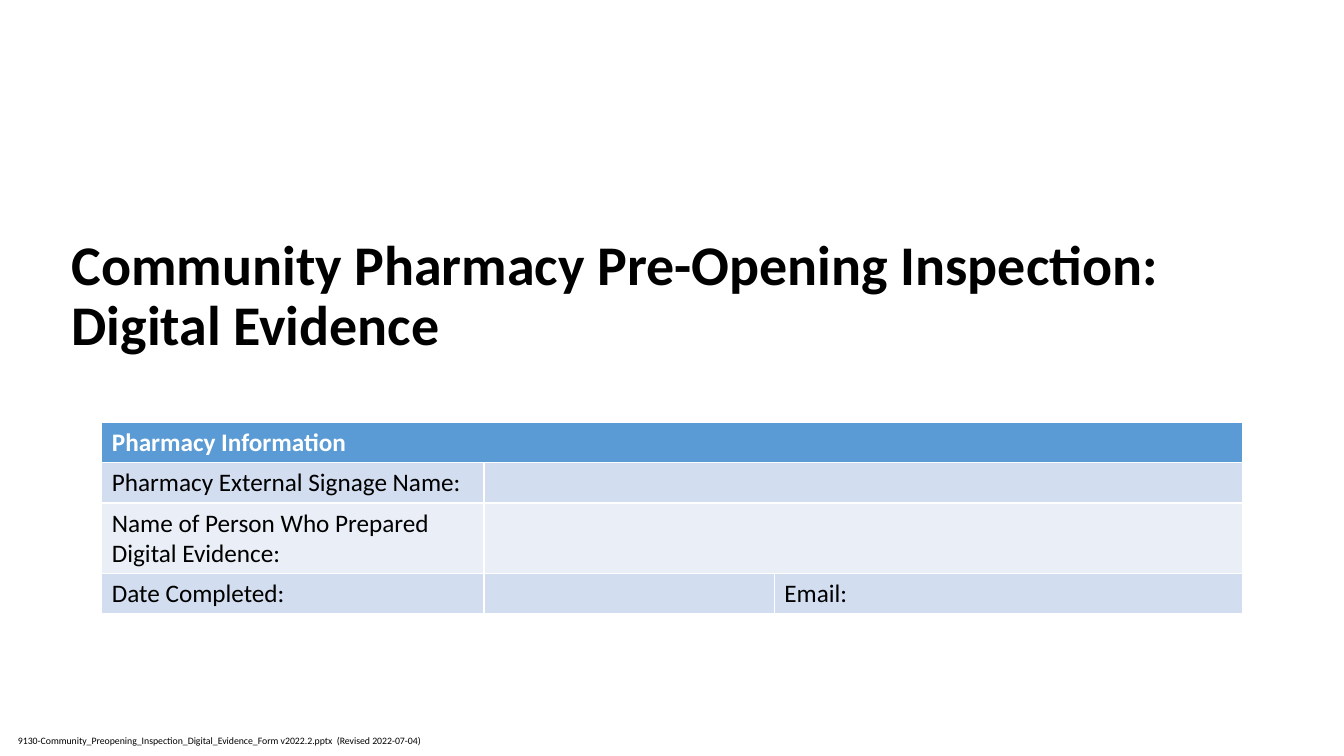
from pptx import Presentation
from pptx.dml.color import RGBColor
from pptx.enum.text import MSO_ANCHOR, PP_ALIGN
from pptx.util import Inches, Pt

BLACK = RGBColor(0x00, 0x00, 0x00)
WHITE = RGBColor(0xFF, 0xFF, 0xFF)
HEADER_BLUE = RGBColor(0x5B, 0x9B, 0xD5)
BAND_DARK = RGBColor(0xD2, 0xDE, 0xEF)
BAND_LIGHT = RGBColor(0xEA, 0xEF, 0xF7)

COLUMNS = [3.79, 2.88, 4.64]
ROW_HEIGHTS = [0.4, 0.4, 0.7, 0.4]
ROWS = [
    ["Pharmacy Information", "", ""],
    ["Pharmacy External Signage Name:", "", ""],
    ["Name of Person Who Prepared Digital Evidence:", "", ""],
    ["Date Completed:", "", "Email:"],
]
MERGES = [((0, 0), (0, 2)), ((1, 1), (1, 2)), ((2, 1), (2, 2))]


class FormSlide:
    def __init__(self, prs, font="Calibri"):
        self.s = prs.slides.add_slide(prs.slide_layouts[5])
        self.font = font

    def add_text(self, tf, text, size, color=BLACK, bold=False):
        """Put one styled run in the first paragraph and return that paragraph."""
        p = tf.paragraphs[0]
        r = p.add_run()
        r.text = text
        style = {"name": self.font, "size": Pt(size), "bold": bold}
        for key, value in style.items():
            setattr(r.font, key, value)
        r.font.color.rgb = color
        return p

    def title(self, text, left, top, width, height):
        sp = self.s.shapes.title
        box = {"left": left, "top": top, "width": width, "height": height}
        for key, value in box.items():
            setattr(sp, key, Inches(value))
        tf = sp.text_frame
        tf.word_wrap = True
        tf.vertical_anchor = MSO_ANCHOR.BOTTOM
        p = self.add_text(tf, text, 40, bold=True)
        p.alignment = PP_ALIGN.LEFT
        p.line_spacing = 0.9

    def footer(self, text, *box):
        sp = self.s.shapes.add_textbox(*map(Inches, box))
        sp.text_frame.word_wrap = True
        self.add_text(sp.text_frame, text, 7)

    def table(self, left, top):
        box = (left, top, sum(COLUMNS), sum(ROW_HEIGHTS))
        frame = self.s.shapes.add_table(len(ROWS), len(COLUMNS), *map(Inches, box))
        table = frame.table
        for column, width in zip(table.columns, COLUMNS):
            column.width = Inches(width)
        for i, (row, height) in enumerate(zip(table.rows, ROW_HEIGHTS)):
            row.height = Inches(height)
            header = i == 0
            fill = HEADER_BLUE if header else BAND_DARK if i % 2 else BAND_LIGHT
            for cell, text in zip(row.cells, ROWS[i]):
                cell.fill.solid()
                cell.fill.fore_color.rgb = fill
                if text:
                    self.add_text(cell.text_frame, text, 18, WHITE if header else BLACK, header)
        for start, end in MERGES:
            table.cell(*start).merge(table.cell(*end))


def main():
    prs = Presentation()
    prs.slide_width, prs.slide_height = Inches(13.33), Inches(7.5)
    slide = FormSlide(prs)
    slide.footer(
        "9130-Community_Preopening_Inspection_Digital_Evidence_Form v2022.2.pptx  (Revised 2022-07-04)",
        0.08, 7.24, 4.33, 0.22)
    slide.title("Community Pharmacy Pre-Opening Inspection: Digital Evidence",
                0.61, 0.99, 12.12, 2.61)
    slide.table(1.01, 4.19)
    prs.save("out.pptx")


if __name__ == "__main__":
    main()
